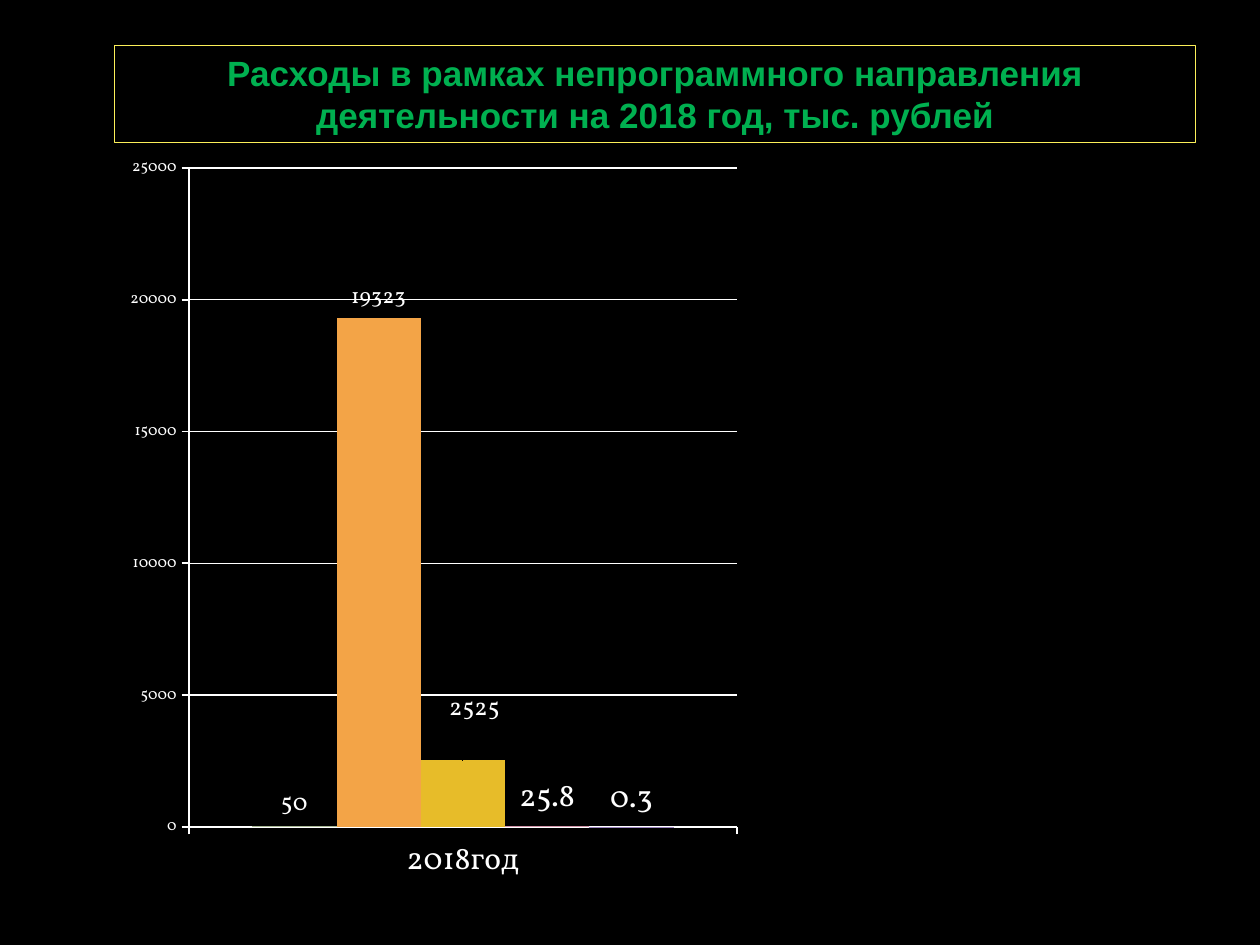
from lxml.etree import SubElement
from pptx import Presentation
from pptx.chart.data import CategoryChartData
from pptx.dml.color import RGBColor
from pptx.enum.chart import XL_CHART_TYPE as ChartType, XL_LABEL_POSITION as LabelPos
from pptx.enum.chart import XL_TICK_MARK as Tick
from pptx.enum.shapes import MSO_SHAPE as Preset
from pptx.enum.text import MSO_ANCHOR as Anchor, MSO_AUTO_SIZE as AutoSize, PP_ALIGN as Align
from pptx.oxml.ns import qn
from pptx.util import Inches, Pt

# Content
HEADING = "Расходы в рамках непрограммного направления деятельности на 2018 год, тыс. рублей"
YEAR = "2018год"
# name, value, colour, label size, label shift (shares of the chart) or None
EXPENSES = [
    ("Series 1", 50, "A5B592", 14, None),
    ("Series 2", 19323, "F3A447", 12.4, None),
    ("Series 3", 2525, "E7BC29", 14, (0.01, -0.04)),
    ("Series 4", 25.8, "D092A7", 18, None),
    ("Series 5", 0.3, "9C85C0", 18, None),
]
AXIS_MAX, AXIS_STEP = 25000, 5000

# Theme and layout
THEME = {
    "back": "000000", "ink": "FFFFFF", "heading": "00B050", "frame": "FCF059",
    "heading_font": "Arial", "chart_font": "Vollkorn",
    "heading_size": 20, "chart_size": 18, "axis_size": 9,
}
WIDTH, HEIGHT = 10, 7.5
HEADING_BOX = (0.91, 0.36, 8.58, 0.77)
CHART_BOX = (0.2, 1.25, 9.29, 5.8)
PLOT_SHARES = {"x": 0.14, "y": 0.013, "w": 0.468, "h": 0.903}


def rgb(key):
    return RGBColor.from_string(THEME.get(key, key))


def style_font(font, size, colour, face):
    font.size, font.name = Pt(size), THEME[face]
    font.color.rgb = rgb(colour)


def style_line(line, colour, width):
    line.color.rgb = rgb(colour)
    line.width = Pt(width)


def fill_layout(layout, settings):
    manual = SubElement(layout, qn("c:manualLayout"))
    for tag, value in settings.items():
        SubElement(manual, qn(f"c:{tag}")).set("val", str(value))


def add_heading(slide):
    heading = slide.shapes.add_shape(Preset.RECTANGLE, *map(Inches, HEADING_BOX))
    heading.shadow.inherit = False
    heading.fill.background()
    style_line(heading.line, "frame", 0.75)
    frame = heading.text_frame
    frame.text = HEADING
    frame.word_wrap = True
    frame.auto_size = AutoSize.SHAPE_TO_FIT_TEXT
    frame.vertical_anchor = Anchor.TOP
    paragraph = frame.paragraphs[0]
    paragraph.alignment = Align.CENTER
    font = paragraph.runs[0].font
    style_font(font, THEME["heading_size"], "heading", "heading_font")
    font.bold = True


def label_series(series, size, shift):
    labels = series.data_labels
    labels.show_value = True
    labels.position = LabelPos.OUTSIDE_END
    style_font(labels.font, size, "ink", "chart_font")
    if shift:
        label = series.points[0].data_label
        label.position = LabelPos.OUTSIDE_END
        style_font(label.font, size, "ink", "chart_font")
        entry = labels._element.find(qn("c:dLbl"))
        layout = SubElement(entry, qn("c:layout"))
        entry.insert(1, layout)
        fill_layout(layout, dict(zip("xy", shift)))


def add_expense_chart(slide):
    data = CategoryChartData()
    data.categories = [YEAR]
    for name, value, *_ in EXPENSES:
        data.add_series(name, [value])
    chart = slide.shapes.add_chart(
        ChartType.COLUMN_CLUSTERED, *map(Inches, CHART_BOX), data).chart
    chart.has_title = chart.has_legend = False
    style_font(chart.font, THEME["chart_size"], "ink", "chart_font")

    # Axes and gridlines
    years, amounts = chart.category_axis, chart.value_axis
    for axis, size in ((years, THEME["chart_size"]), (amounts, THEME["axis_size"])):
        axis.major_tick_mark, axis.minor_tick_mark = Tick.OUTSIDE, Tick.NONE
        style_line(axis.format.line, "ink", 1)
        style_font(axis.tick_labels.font, size, "ink", "chart_font")
    amounts.minimum_scale, amounts.maximum_scale = 0, AXIS_MAX
    amounts.major_unit = AXIS_STEP
    style_line(amounts.major_gridlines.format.line, "ink", 0.75)

    # Columns
    plot = chart.plots[0]
    plot.gap_width, plot.overlap, plot.vary_by_categories = 150, 0, False
    for series, (_, _, colour, size, shift) in zip(plot.series, EXPENSES):
        series.format.fill.solid()
        series.format.fill.fore_color.rgb = rgb(colour)
        label_series(series, size, shift)

    # Plot area position
    area = chart._chartSpace.chart.plotArea
    layout = area.find(qn("c:layout"))
    if layout is None:
        layout = SubElement(area, qn("c:layout"))
        area.insert(0, layout)
    fill_layout(layout, {"layoutTarget": "inner", "xMode": "edge",
                         "yMode": "edge", **PLOT_SHARES})


def main():
    deck = Presentation()
    deck.slide_width, deck.slide_height = Inches(WIDTH), Inches(HEIGHT)
    slide = deck.slides.add_slide(deck.slide_layouts[6])
    slide.background.fill.solid()
    slide.background.fill.fore_color.rgb = rgb("back")
    add_heading(slide)
    add_expense_chart(slide)
    deck.save("out.pptx")


if __name__ == "__main__":
    main()
